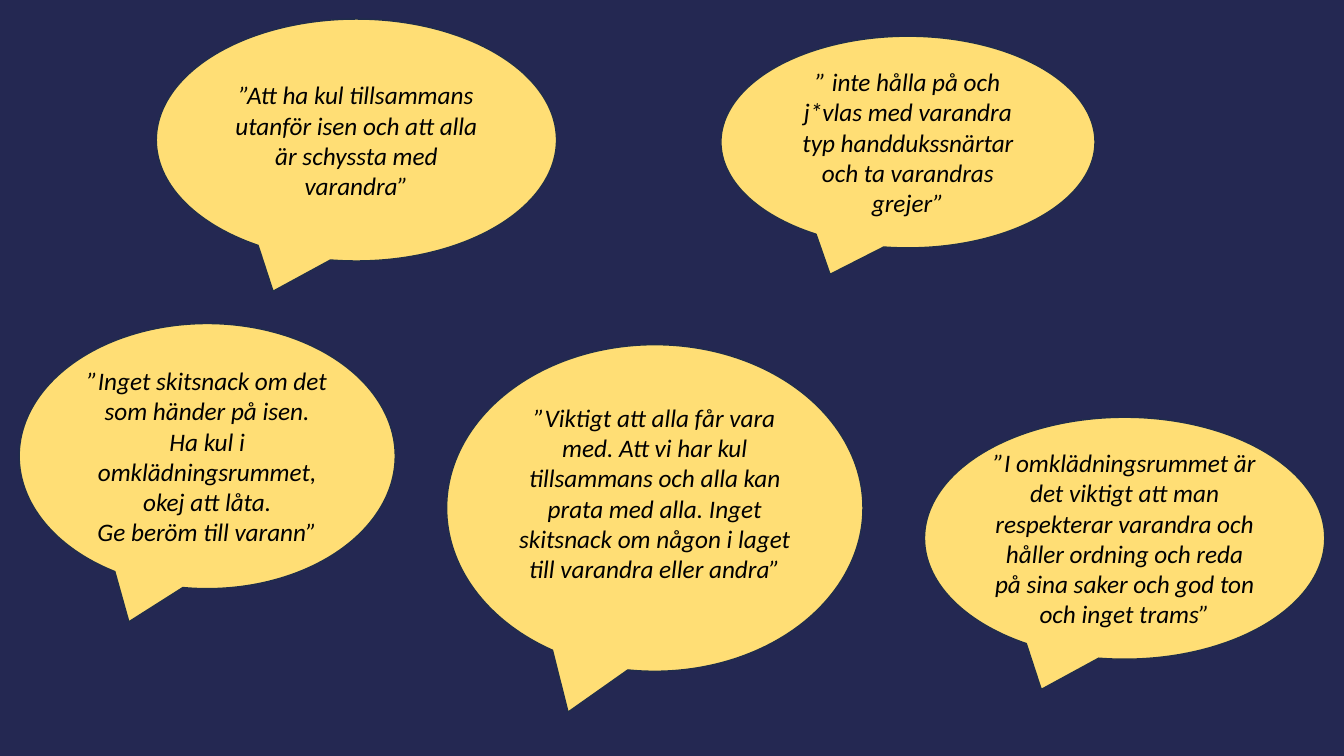
from pptx import Presentation
from pptx.dml.color import RGBColor
from pptx.enum.shapes import MSO_SHAPE
from pptx.enum.text import MSO_ANCHOR, PP_ALIGN
from pptx.util import Inches, Pt

CALLOUT = MSO_SHAPE.OVAL_CALLOUT
MIDDLE = MSO_ANCHOR.MIDDLE
CENTER = PP_ALIGN.CENTER
BLANK_LAYOUT = 6

NAVY, YELLOW, OUTLINE, BLACK = "242852", "FFDE75", "202D4B", "000000"
QUOTE_FONT = {"name": "Calibri", "size": Pt(18), "italic": True}

# Left, top, width, height in percent of the slide; paragraphs; bottom inset in inches
QUOTES = [
    ((11.63, 2.53, 29.78, 32),
     ["”Att ha kul tillsammans utanför isen och att alla är schyssta med varandra”"],
     0.05),
    ((1.43, 42.8, 27.98, 35.07),
     ["”Inget skitsnack om det som händer på isen.",
      "Ha kul i omklädningsrummet, okej att låta.",
      "Ge beröm till varann”"],
     0.05),
    ((53.64, 4.8, 27.83, 28),
     ["” inte hålla på och j*vlas med varandra typ handdukssnärtar "
      "och ta varandras grejer”"],
     0.05),
    ((68.79, 55.2, 29.78, 32),
     ["”I omklädningsrummet är det viktigt att man respekterar varandra och "
      "håller ordning och reda på sina saker och god ton och inget trams”"],
     0.05),
    ((33.23, 45.6, 30.98, 43.2),
     ["”Viktigt att alla får vara med. Att vi har kul tillsammans och alla kan "
      "prata med alla. Inget skitsnack om någon i laget till varandra eller andra”"],
     0.35),
]


def rgb(value):
    return RGBColor.from_string(value)


class QuoteSlide:
    def __init__(self, prs):
        self.width, self.height = prs.slide_width, prs.slide_height
        self.s = prs.slides.add_slide(prs.slide_layouts[BLANK_LAYOUT])

    def background(self, color):
        fill = self.s.background.fill
        fill.solid()
        fill.fore_color.rgb = rgb(color)

    def box(self, left, top, width, height):
        """Turn percentages of the slide into lengths."""
        return (round(self.width * left / 100), round(self.height * top / 100),
                round(self.width * width / 100), round(self.height * height / 100))

    def bubble(self, area, paragraphs, bottom_inset):
        sp = self.s.shapes.add_shape(CALLOUT, *self.box(*area))
        sp.shadow.inherit = False
        sp.fill.solid()
        sp.fill.fore_color.rgb = rgb(YELLOW)
        sp.line.color.rgb = rgb(OUTLINE)
        sp.line.width = Pt(1)
        tf = sp.text_frame
        tf.word_wrap = True
        tf.vertical_anchor = MIDDLE
        tf.margin_bottom = Inches(bottom_inset)
        for i, text in enumerate(paragraphs):
            p = tf.add_paragraph() if i else tf.paragraphs[0]
            p.alignment = CENTER
            r = p.add_run()
            r.text = text
            r.font.color.rgb = rgb(BLACK)
            for name, value in QUOTE_FONT.items():
                setattr(r.font, name, value)


def main():
    prs = Presentation()
    prs.slide_width, prs.slide_height = Inches(13.33), Inches(7.5)
    slide = QuoteSlide(prs)
    slide.background(NAVY)
    for quote in QUOTES:
        slide.bubble(*quote)
    prs.save("out.pptx")


if __name__ == "__main__":
    main()
